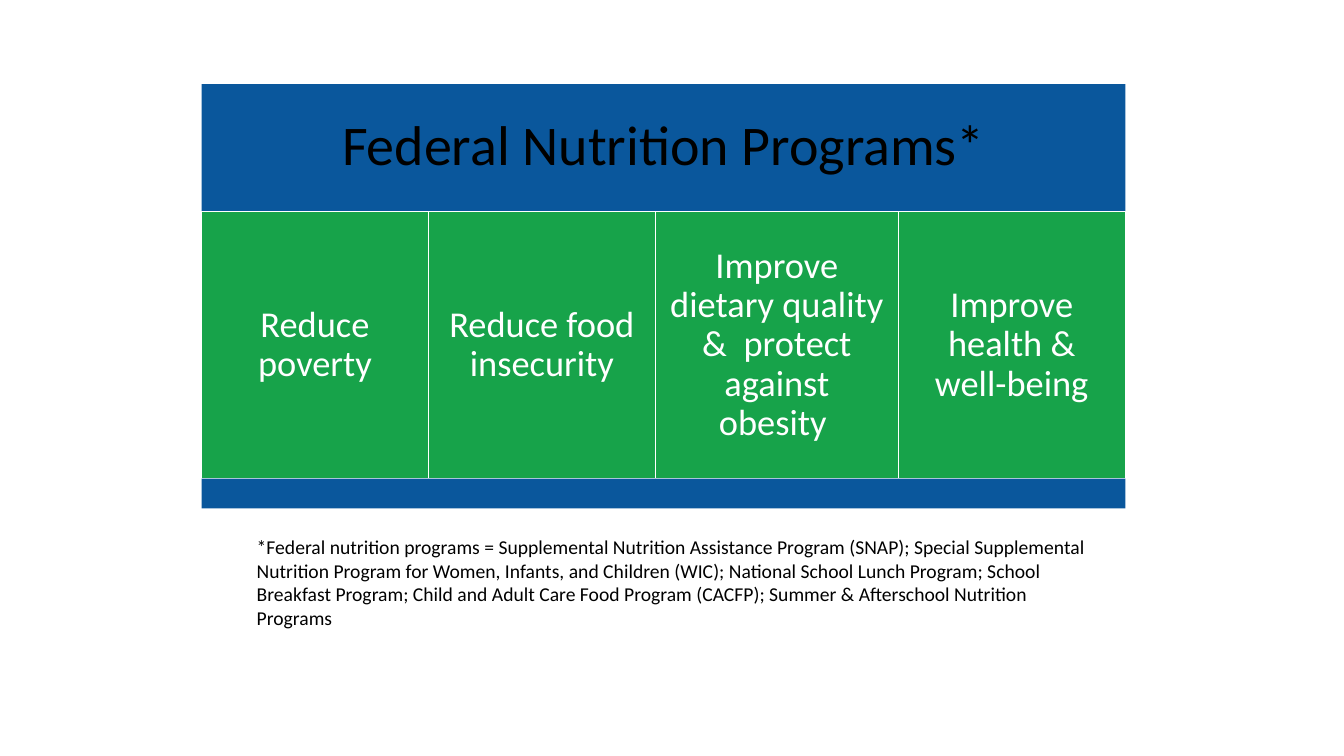
from pptx import Presentation
from pptx.dml.color import RGBColor
from pptx.enum.shapes import MSO_SHAPE
from pptx.enum.text import MSO_ANCHOR, MSO_AUTO_SIZE, PP_ALIGN
from pptx.util import Cm, Pt

BLUE, GREEN, WHITE, BLACK = "0A579C", "17A34A", "FFFFFF", "000000"
LEFT, WIDTH = 5.08, 23.28
GOALS = [
    ("Reduce poverty", 5.72),
    ("Reduce food insecurity", 5.72),
    ("Improve dietary quality &  protect against obesity ", 6.12),
    ("Improve health & well-being", 5.72),
]
NOTE = (
    "*Federal nutrition programs = Supplemental Nutrition Assistance Program (SNAP); "
    "Special Supplemental Nutrition Program for Women, Infants, and Children (WIC); "
    "National School Lunch Program; School Breakfast Program; Child and Adult Care "
    "Food Program (CACFP); Summer & Afterschool Nutrition Programs"
)


def paint(code):
    return RGBColor.from_string(code)


def write(frame, text, size=14, color=BLACK, font="Calibri",
          align=PP_ALIGN.LEFT, space=1.0):
    frame.word_wrap = True
    para = frame.paragraphs[0]
    para.alignment = align
    para.line_spacing = space
    run = para.add_run()
    run.text = text
    run.font.name = font
    run.font.size = Pt(size)
    run.font.color.rgb = paint(color)


class Board:
    def __init__(self, slide):
        self.slide = slide

    def block(self, left, top, width, height, fill, edge=None):
        shape = self.slide.shapes.add_shape(
            MSO_SHAPE.RECTANGLE, Cm(left), Cm(top), Cm(width), Cm(height))
        shape.shadow.inherit = False
        shape.fill.solid()
        shape.fill.fore_color.rgb = paint(fill)
        if edge:
            shape.line.color.rgb = paint(edge)
            shape.line.width = Pt(1)
        else:
            shape.line.fill.background()
        return shape

    def label(self, shape, text, size, color, inset):
        frame = shape.text_frame
        frame.vertical_anchor = MSO_ANCHOR.MIDDLE
        frame.margin_left = frame.margin_right = Cm(inset)
        frame.margin_top = frame.margin_bottom = Cm(inset)
        write(frame, text, size=size, color=color,
              align=PP_ALIGN.CENTER, space=0.9)

    def note(self, left, top, width, height, text):
        box = self.slide.shapes.add_textbox(
            Cm(left), Cm(top), Cm(width), Cm(height))
        write(box.text_frame, text)
        box.text_frame.auto_size = MSO_AUTO_SIZE.SHAPE_TO_FIT_TEXT


def main():
    deck = Presentation()
    deck.slide_width, deck.slide_height = Cm(33.87), Cm(19.05)
    board = Board(deck.slides.add_slide(deck.slide_layouts[6]))

    head = board.block(LEFT, 2.12, WIDTH, 3.21, BLUE)
    board.label(head, "Federal Nutrition Programs*", 40, BLACK, 0.43)

    left = LEFT
    for text, width in GOALS:
        goal = board.block(left, 5.33, width, 6.73, GREEN, edge=WHITE)
        board.label(goal, text, 26, WHITE, 0.28)
        left += width

    board.block(LEFT, 12.06, WIDTH, 0.75, BLUE)
    board.note(6.22, 13.36, 21.72, 2.64, NOTE)
    deck.save("out.pptx")


if __name__ == "__main__":
    main()
